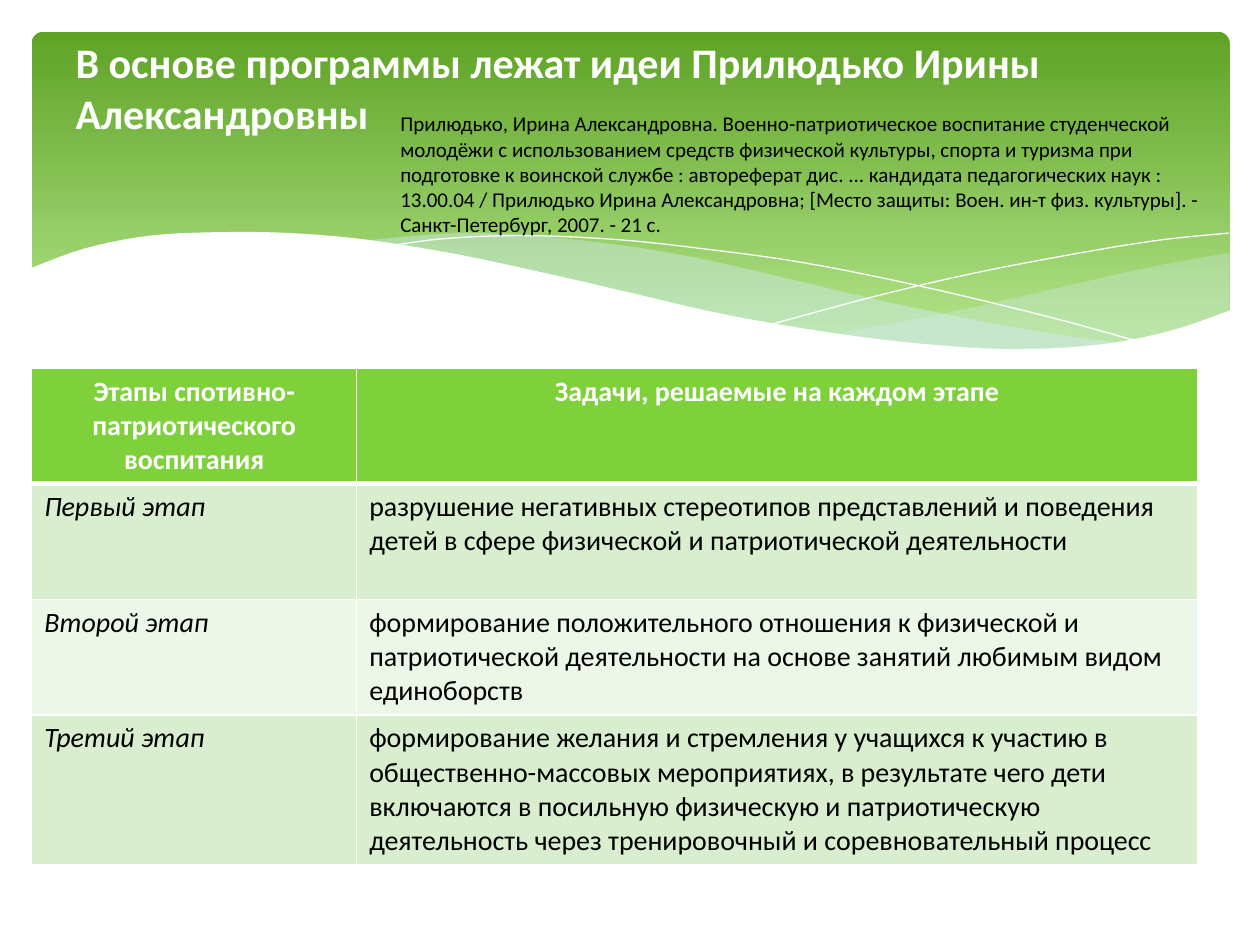
from lxml import etree
from pptx import Presentation
from pptx.dml.color import RGBColor
from pptx.enum.shapes import MSO_SHAPE
from pptx.enum.text import MSO_ANCHOR, MSO_AUTO_SIZE, PP_ALIGN
from pptx.oxml.ns import qn
from pptx.util import Cm, Pt

ROUND_RECT = MSO_SHAPE.ROUNDED_RECTANGLE
TOP, CENTER, LEFT = MSO_ANCHOR.TOP, PP_ALIGN.CENTER, PP_ALIGN.LEFT
FIT_SHAPE = MSO_AUTO_SIZE.SHAPE_TO_FIT_TEXT
FONT = "Calibri"
WHITE, BLACK = "FFFFFF", "000000"

TITLE = "В основе программы лежат идеи Прилюдько Ирины Александровны"
SOURCE = (
    "Прилюдько, Ирина Александровна. Военно-патриотическое воспитание студенческой "
    "молодёжи с использованием средств физической культуры, спорта и туризма при "
    "подготовке к воинской службе : автореферат дис. ... кандидата педагогических наук : "
    "13.00.04 / Прилюдько Ирина Александровна; [Место защиты: Воен. ин-т физ. культуры]. - "
    "Санкт-Петербург, 2007. - 21 с.")
ROWS = [
    ("Этапы спотивно-патриотического воспитания", "Задачи, решаемые на каждом этапе"),
    ("Первый этап",
     "разрушение негативных стереотипов представлений и поведения детей в сфере "
     "физической и патриотической деятельности"),
    ("Второй этап",
     "формирование положительного отношения к физической и патриотической "
     "деятельности на основе занятий любимым видом единоборств"),
    ("Третий этап",
     "формирование желания и стремления у учащихся к участию в общественно-массовых "
     "мероприятиях, в результате чего дети включаются в посильную физическую и "
     "патриотическую деятельность через тренировочный и соревновательный процесс"),
]
COL_WIDTHS = [6.55, 16.95]
ROW_HEIGHTS = [2.3, 2.34, 2.32, 3.0]
ROW_FILLS = ["7FD13B", "D8EECE", "ECF7E8", "D8EECE"]

# Key points of the waves, in cm from the corner of the band
RIGHT_TOP = [(16.15, 6.1), (18.49, 5.66), (20.5, 5.21), (22.38, 4.78), (24.15, 4.45)]
RIGHT_BOTTOM = [(24.15, 5.64), (23.11, 6.02), (22.15, 6.22), (20.8, 6.4),
                (19.76, 6.43), (18.29, 6.35), (16.15, 6.1)]
MIDDLE_TOP = [(22.05, 6.3), (19.86, 5.97), (17.3, 5.46), (15.34, 5), (13.46, 4.57),
              (11.79, 4.29), (10.03, 4.11), (8.53, 4.06), (6.63, 4.22)]
MIDDLE_BOTTOM = [(6.63, 4.22), (8.56, 4.52), (10.77, 5), (12.83, 5.46), (14.63, 5.84),
                 (16.64, 6.17), (18.36, 6.38), (19.86, 6.43), (21.13, 6.4), (22.05, 6.3)]
FALLING_LINE = [(7.21, 4.32), (8.33, 4.17), (9.93, 4.11), (11.79, 4.19), (13.49, 4.37),
                (15.52, 4.65), (17.83, 5.11), (20.47, 5.74), (22.4, 6.27)]
RISING_LINE = [(14.94, 5.89), (17.02, 5.33), (19.08, 4.85), (21.36, 4.42),
               (22.83, 4.19), (24.13, 4.06)]
WHITE_EDGE = [(24.18, 5.61), (22.99, 6.02), (21.59, 6.3), (19.91, 6.4), (18.26, 6.32),
              (16.33, 6.1), (14.07, 5.72), (12.14, 5.28), (10.72, 4.95), (8.64, 4.5),
              (6.73, 4.19), (5.21, 4.06), (3.86, 4.04), (2.39, 4.11), (1.07, 4.37),
              (-0.05, 4.78)]
WHITE_BASE = [(-0.05, 7.72), (24.18, 7.72)]


def rgb(value):
    return RGBColor.from_string(value)


def write(tf, text, align=LEFT, color=BLACK, **font):
    p = tf.paragraphs[0]
    p.alignment = align
    r = p.add_run()
    r.text = text
    for name, value in {"name": FONT, "bold": False, "italic": False, **font}.items():
        setattr(r.font, name, value)
    r.font.color.rgb = rgb(color)


def smooth(points, steps=5):
    """Catmull-Rom curve through the points."""
    padded = [points[0], *points, points[-1]]
    curve = [points[0]]
    for a, b, c, d in zip(padded, padded[1:], padded[2:], padded[3:]):
        for step in range(1, steps + 1):
            t = step / steps
            curve.append(tuple(
                (2 * q + (r - p) * t + (2 * p - 5 * q + 4 * r - s) * t ** 2
                 + (3 * q - p - 3 * r + s) * t ** 3) / 2
                for p, q, r, s in zip(a, b, c, d)))
    return curve


def add_wave(shapes, left, top, points, fill=None, alpha=100):
    """Filled area, or an open white hairline when no fill is given."""
    spots = [(Cm(left + x), Cm(top + y)) for x, y in points]
    builder = shapes.build_freeform(*spots[0])
    builder.add_line_segments(spots[1:], close=fill is not None)
    sp = builder.convert_to_shape()
    sp.shadow.inherit = False
    if fill is None:
        sp.fill.background()
        sp.line.color.rgb = rgb(WHITE)
        sp.line.width = Pt(0)
        return
    sp.fill.solid()
    sp.fill.fore_color.rgb = rgb(fill)
    sp.line.fill.background()
    if alpha < 100:
        clr = sp.fill._xPr.find(qn("a:solidFill"))[0]
        etree.SubElement(clr, qn("a:alpha")).set("val", str(alpha * 1000))


def add_band(shapes, left, top, width, height):
    # Green gradient panel
    sp = shapes.add_shape(ROUND_RECT, Cm(left), Cm(top), Cm(width), Cm(height))
    sp.adjustments[0] = 0.034
    sp.shadow.inherit = False
    sp.line.fill.background()
    sp.fill.gradient()
    sp.fill.gradient_angle = 270
    for stop, (position, color) in zip(sp.fill.gradient_stops,
                                       [(0, "5FA326"), (0.9, "B2E389")]):
        stop.position = position
        stop.color.rgb = rgb(color)
    # Waves along its lower edge
    tint = "D6ECFF"
    for points, fill, alpha in [
            (smooth(RIGHT_TOP) + smooth(RIGHT_BOTTOM), tint, 29),
            (smooth(MIDDLE_TOP) + smooth(MIDDLE_BOTTOM), tint, 40),
            (smooth(FALLING_LINE), None, 100),
            (smooth(RISING_LINE), None, 100),
            (smooth(WHITE_EDGE) + WHITE_BASE, WHITE, 100)]:
        add_wave(shapes, left, top, points, fill, alpha)


def place_title(title, left, top, width, height):
    title.left, title.top, title.width, title.height = map(Cm, (left, top, width, height))
    tf = title.text_frame
    for name, value in {"word_wrap": True, "vertical_anchor": TOP, "margin_top": 0,
                        "auto_size": MSO_AUTO_SIZE.NONE}.items():
        setattr(tf, name, value)
    write(tf, TITLE, color=WHITE, size=Pt(24), bold=True)
    title._element.getparent().append(title._element)  # bring in front of the band


def add_source(shapes, left, top, width, height):
    tf = shapes.add_textbox(Cm(left), Cm(top), Cm(width), Cm(height)).text_frame
    tf.word_wrap = True
    tf.auto_size = FIT_SHAPE
    write(tf, SOURCE, size=Pt(12))


def set_borders(cell, **widths):
    tc_pr = cell._tc.get_or_add_tcPr()
    for i, (side, width) in enumerate(widths.items()):
        ln = etree.Element(qn("a:ln" + side), w=str(Pt(width)))
        fill = etree.SubElement(ln, qn("a:solidFill"))
        etree.SubElement(fill, qn("a:srgbClr"), val=WHITE)
        tc_pr.insert(i, ln)


def add_stages(shapes, left, top):
    table = shapes.add_table(len(ROWS), len(COL_WIDTHS), Cm(left), Cm(top),
                             Cm(sum(COL_WIDTHS)), Cm(sum(ROW_HEIGHTS))).table
    for column, width in zip(table.columns, COL_WIDTHS):
        column.width = Cm(width)
    for i, texts in enumerate(ROWS):
        table.rows[i].height = Cm(ROW_HEIGHTS[i])
        for j, text in enumerate(texts):
            cell = table.cell(i, j)
            cell.fill.solid()
            cell.fill.fore_color.rgb = rgb(ROW_FILLS[i])
            set_borders(cell, L=1, R=1, T=3 if i == 1 else 1, B=3 if i == 0 else 1)
            style = (dict(align=CENTER, color=WHITE, bold=True) if i == 0
                     else dict(italic=j == 0))
            write(cell.text_frame, text, size=Pt(16), **style)


def main():
    prs = Presentation()
    prs.slide_width, prs.slide_height = Cm(25.4), Cm(19.05)
    s = prs.slides.add_slide(prs.slide_layouts[5])
    add_band(s.shapes, 0.64, 0.64, 24.15, 6.86)
    place_title(s.shapes.title, 1.27, 0.74, 22.86, 3.48)
    add_stages(s.shapes, 0.64, 7.42)
    add_source(s.shapes, 7.82, 2.11, 16.94, 2.82)
    prs.save("out.pptx")


if __name__ == "__main__":
    main()
